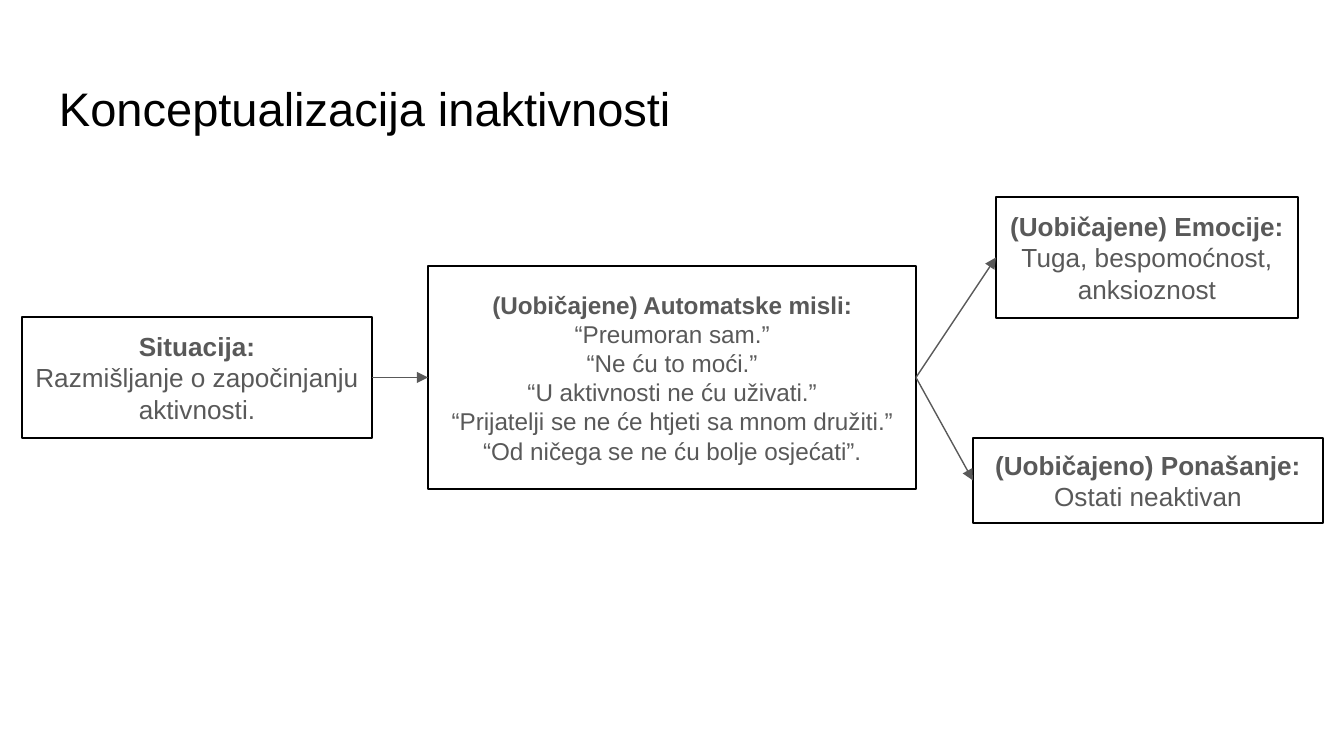
"""Build a slide that maps how inactivity comes about."""
from dataclasses import dataclass

from lxml import etree
from pptx import Presentation
from pptx.dml.color import RGBColor
from pptx.enum.shapes import MSO_CONNECTOR, MSO_SHAPE
from pptx.enum.text import MSO_ANCHOR, MSO_AUTO_SIZE, PP_ALIGN
from pptx.oxml.ns import qn
from pptx.util import Emu, Pt

RECTANGLE = MSO_SHAPE.RECTANGLE
STRAIGHT = MSO_CONNECTOR.STRAIGHT
LEFT, CENTER = PP_ALIGN.LEFT, PP_ALIGN.CENTER
TOP, MIDDLE = MSO_ANCHOR.TOP, MSO_ANCHOR.MIDDLE
NO_FIT = MSO_AUTO_SIZE.NONE
LEFT_SITE, RIGHT_SITE = 1, 3
TITLE_ONLY = 5
PAGE_WIDTH, PAGE_HEIGHT = 1344, 756
EMU_PER_PX = 9144000 / PAGE_WIDTH


def px(length):
    """Turn a length in px into EMU."""
    return Emu(round(length * EMU_PER_PX))


@dataclass(frozen=True)
class Theme:
    """Colours, font and sizes of the slide."""
    font: str = "Arial"
    ink: RGBColor = RGBColor(0x00, 0x00, 0x00)
    grey: RGBColor = RGBColor(0x59, 0x59, 0x59)
    title_size: float = 25.2
    box_size: float = 14
    thoughts_size: float = 13
    line_width: float = 0.75
    inset: int = 13


class Diagram:
    """Draws styled elements on one slide."""

    def __init__(self, page, theme):
        """Keep the slide and its theme."""
        self.page = page
        self.theme = theme

    def fill_text(self, frame, lines, size, color, align, anchor):
        """Fill a text frame with one paragraph per line."""
        frame.text = "\n".join(lines)
        frame.word_wrap = True
        frame.auto_size = NO_FIT
        frame.vertical_anchor = anchor
        frame.margin_left = frame.margin_right = px(self.theme.inset)
        frame.margin_top = frame.margin_bottom = px(self.theme.inset)
        for para in frame.paragraphs:
            para.alignment = align
            for span in para.runs:
                span.font.name = self.theme.font
                span.font.size = Pt(size)
                span.font.color.rgb = color

    def title(self, text, left, top, width, height):
        """Place and fill the title placeholder."""
        title = self.page.shapes.title
        title.left, title.top = px(left), px(top)
        title.width, title.height = px(width), px(height)
        self.fill_text(title.text_frame, [text], self.theme.title_size,
                       self.theme.ink, LEFT, TOP)

    def box(self, lines, left, top, width, height, size):
        """Add an outlined box whose first line is a bold heading."""
        box = self.page.shapes.add_shape(
            RECTANGLE, px(left), px(top), px(width), px(height))
        box.shadow.inherit = False
        box.fill.background()
        box.line.color.rgb = self.theme.ink
        box.line.width = Pt(self.theme.line_width)
        self.fill_text(box.text_frame, lines, size,
                       self.theme.grey, CENTER, MIDDLE)
        box.text_frame.paragraphs[0].runs[0].font.bold = True
        return box

    def arrow(self, source, target):
        """Join the right side of one box to the left side of another."""
        arrow = self.page.shapes.add_connector(STRAIGHT, 0, 0, 0, 0)
        arrow.begin_connect(source, RIGHT_SITE)
        arrow.end_connect(target, LEFT_SITE)
        arrow.line.color.rgb = self.theme.grey
        arrow.line.width = Pt(self.theme.line_width)
        properties = arrow.element.spPr
        outline = properties.find(qn("a:ln"))
        etree.SubElement(outline, qn("a:tailEnd"), type="triangle")
        etree.SubElement(properties, qn("a:effectLst"))


def main():
    """Build and save the deck."""
    deck = Presentation()
    deck.slide_width, deck.slide_height = px(PAGE_WIDTH), px(PAGE_HEIGHT)
    page = deck.slides.add_slide(deck.slide_layouts[TITLE_ONLY])
    theme = Theme()
    diagram = Diagram(page, theme)

    diagram.title("Konceptualizacija inaktivnosti", 46, 66, 1252, 84)
    situation = diagram.box(
        ["Situacija:", "Razmišljanje o započinjanju aktivnosti."],
        22, 317, 350, 121, theme.box_size)
    thoughts = diagram.box(
        ["(Uobičajene) Automatske misli:",
         "“Preumoran sam.”",
         "“Ne ću to moći.”",
         "“U aktivnosti ne ću uživati.”",
         "“Prijatelji se ne će htjeti sa mnom družiti.”",
         "“Od ničega se ne ću bolje osjećati”."],
        428, 266, 488, 223, theme.thoughts_size)
    emotions = diagram.box(
        ["(Uobičajene) Emocije:", "Tuga, bespomoćnost, anksioznost"],
        996, 197, 302, 121, theme.box_size)
    behaviour = diagram.box(
        ["(Uobičajeno) Ponašanje:", "Ostati neaktivan"],
        973, 438, 350, 85, theme.box_size)

    diagram.arrow(situation, thoughts)
    diagram.arrow(thoughts, emotions)
    diagram.arrow(thoughts, behaviour)
    deck.save("out.pptx")


if __name__ == "__main__":
    main()
